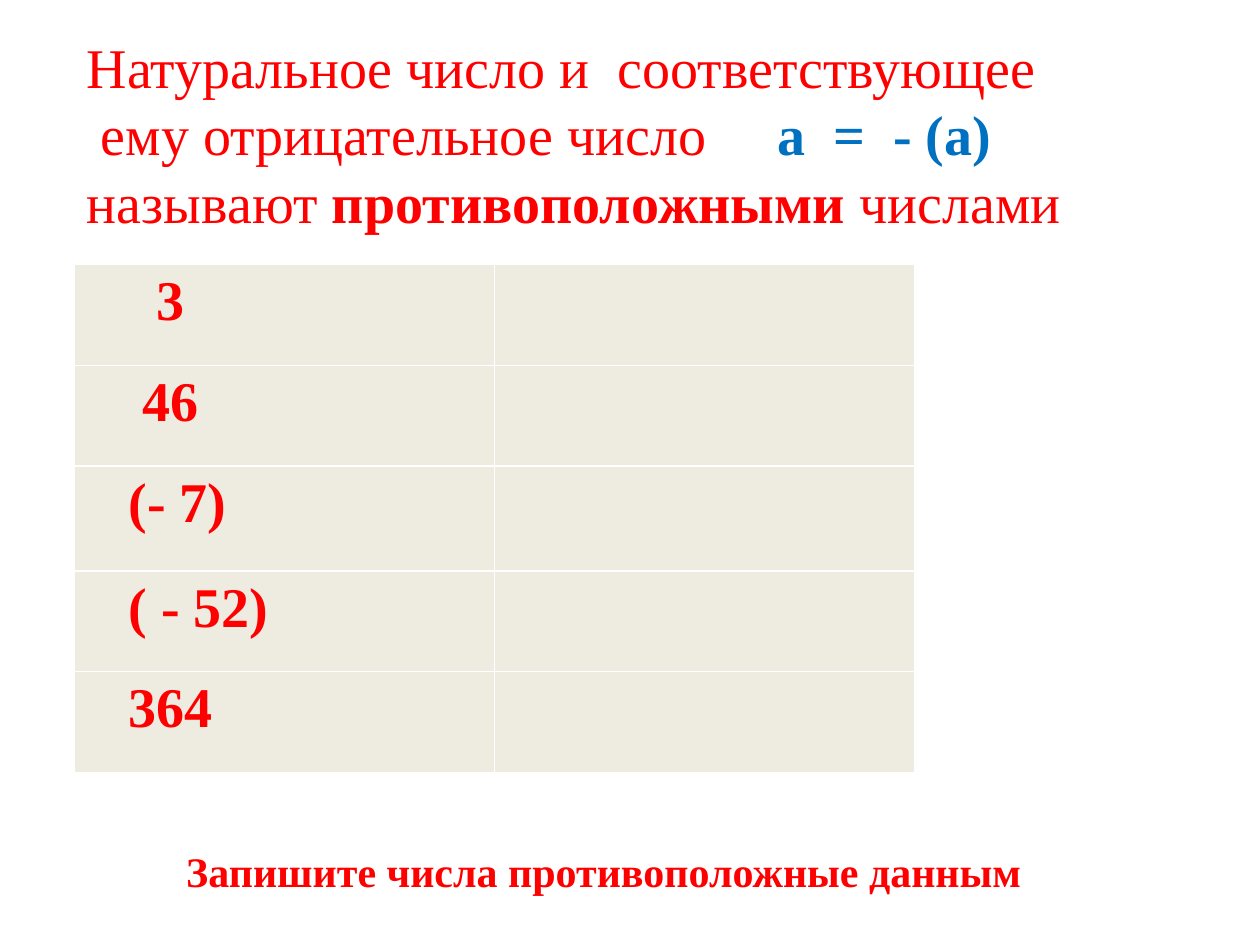
"""Build a slide on opposite numbers: definition, exercise table and task line."""
from lxml import etree
from pptx import Presentation
from pptx.dml.color import RGBColor
from pptx.enum.text import MSO_ANCHOR, PP_ALIGN
from pptx.oxml.ns import qn
from pptx.util import Inches, Pt

RED = RGBColor(0xFF, 0x00, 0x00)
BLUE = RGBColor(0x00, 0x70, 0xC0)
BEIGE = RGBColor(0xEE, 0xEC, 0xE1)
TOP = MSO_ANCHOR.TOP
LEFT = PP_ALIGN.LEFT
FONT = "Times New Roman"
MARGIN = Inches(0.59)
SPACE = Inches(0.11)
FORMULA_TAB = Inches(5.48)


def add_text(paragraph, text, size=32, color=RED, bold=False):
    run = paragraph.add_run()
    run.text = text
    run.font.name = FONT
    run.font.size = Pt(size)
    run.font.bold = bold
    run.font.color.rgb = color


presentation = Presentation()
presentation.slide_width = Inches(10)
presentation.slide_height = Inches(7.5)
width, height = presentation.slide_width, presentation.slide_height
slide = presentation.slides.add_slide(presentation.slide_layouts[5])

definition = slide.shapes.title
definition.left, definition.top = MARGIN, Inches(0.21)
definition.width, definition.height = Inches(8.08), Inches(1.8)
definition.text_frame.vertical_anchor = TOP
definition.text_frame.word_wrap = True

definition_lines = [
    [("Натуральное число и  соответствующее", {})],
    [(" ему отрицательное число\t", {}), ("a  =  - (a)", {"color": BLUE, "bold": True})],
    [("называют ", {}), ("противоположными", {"bold": True}), (" числами", {})],
]
for index, line in enumerate(definition_lines):
    frame = definition.text_frame
    paragraph = frame.add_paragraph() if index else frame.paragraphs[0]
    paragraph.alignment = LEFT
    for text, text_format in line:
        add_text(paragraph, text, **text_format)

formula_properties = definition.text_frame.paragraphs[1]._p.get_or_add_pPr()
tab_list = etree.SubElement(formula_properties, qn("a:tabLst"))
etree.SubElement(tab_list, qn("a:tab"), pos=str(FORMULA_TAB), algn="l")

numbers = [("3", 5), ("46", 4), ("(- 7)", 3), ("( - 52)", 3), ("364", 3)]
row_height = Inches(0.8)
table = slide.shapes.add_table(
    len(numbers), 2, MARGIN, int(height * 0.28), int(width * 2 / 3), row_height * len(numbers)
).table
table.horz_banding = False
for row, (number, indent) in zip(table.rows, numbers):
    row.height = row_height
    for cell in row.cells:
        cell.fill.solid()
        cell.fill.fore_color.rgb = BEIGE
    number_cell = row.cells[0]
    number_cell.margin_left = Inches(0.1) + SPACE * indent
    add_text(number_cell.text_frame.paragraphs[0], number, bold=True)
table.rows[2].height = Inches(0.83)

task = slide.shapes.add_textbox(Inches(1.38), Inches(6.66), Inches(6.9), Inches(0.5))
task.text_frame.word_wrap = False
add_text(task.text_frame.paragraphs[0], "Запишите числа противоположные данным", size=24, bold=True)

presentation.save("out.pptx")
